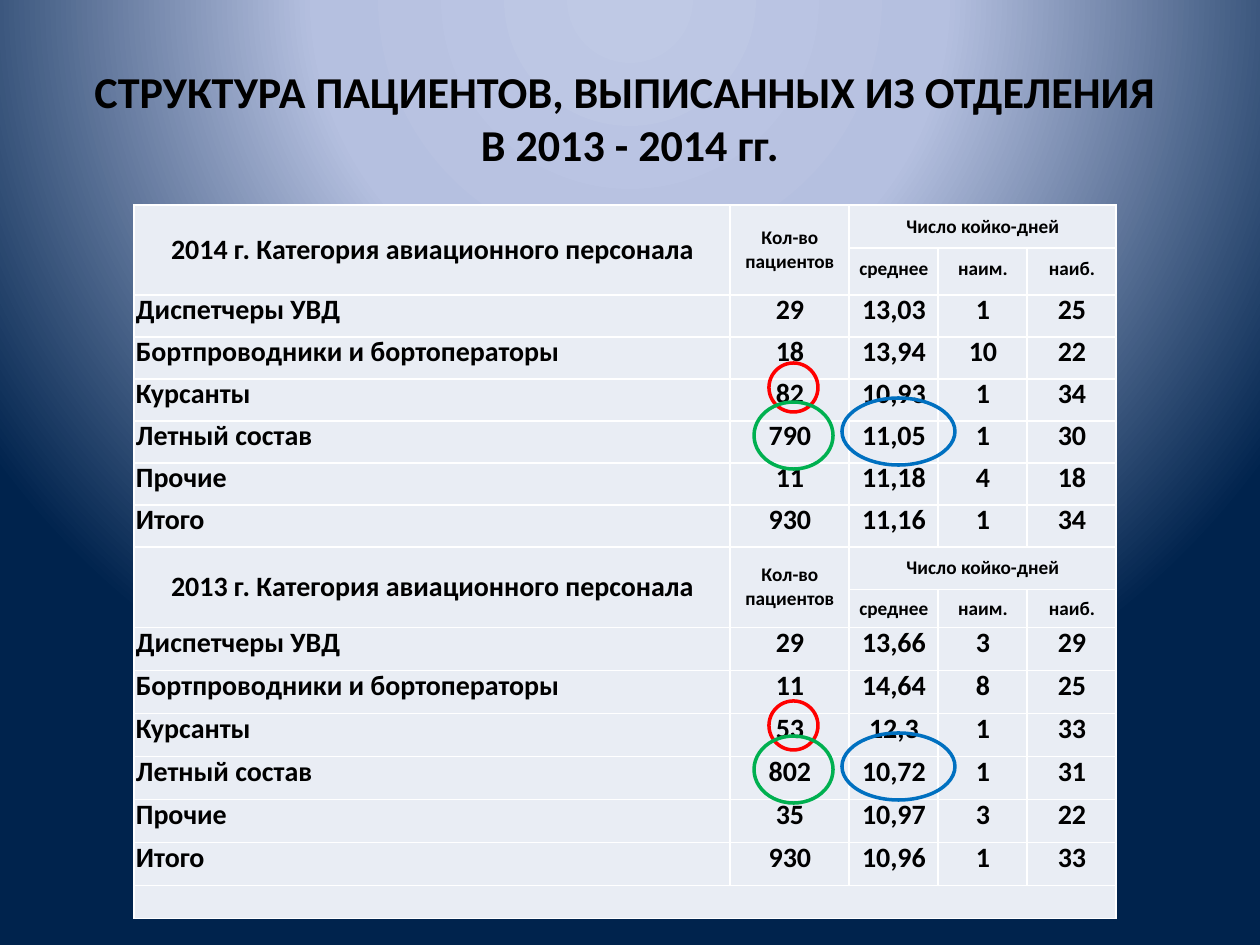
from dataclasses import dataclass

from lxml import etree
from pptx import Presentation
from pptx.dml.color import RGBColor
from pptx.enum.shapes import MSO_SHAPE
from pptx.enum.text import MSO_ANCHOR, PP_ALIGN
from pptx.oxml import parse_xml
from pptx.oxml.ns import nsdecls, qn
from pptx.util import Emu, Pt

EMU_PER_PX = 914400 / 126


@dataclass(frozen=True)
class Theme:
    font: str = "Calibri"
    ink: str = "000000"
    cell: str = "E9EDF4"
    border: str = "FFFFFF"
    red: str = "FF0000"
    green: str = "00B050"
    blue: str = "0070C0"
    glow: tuple = ((0, "BFC9E5"), (40, "B5C0E0"), (100, "00234D"))
    title_size: float = 25.2
    body_size: int = 16
    small_size: int = 11
    border_width: int = 1
    ring_width: int = 2


def px(length):
    return Emu(round(length * EMU_PER_PX))


class SlideBuilder:
    def __init__(self, page, theme):
        self.page = page
        self.theme = theme

    def background(self):
        stops = "".join(
            f'<a:gs pos="{place * 1000}"><a:srgbClr val="{color}"/></a:gs>'
            for place, color in self.theme.glow)
        self.page.element.cSld.insert(0, parse_xml(
            f'<p:bg {nsdecls("p", "a")}><p:bgPr><a:gradFill rotWithShape="1">'
            f'<a:gsLst>{stops}</a:gsLst><a:path path="circle">'
            '<a:fillToRect l="50000" t="-80000" r="50000" b="180000"/></a:path>'
            '</a:gradFill><a:effectLst/></p:bgPr></p:bg>'))

    def style(self, para, size, align):
        para.alignment = align
        for span in para.runs:
            span.font.name = self.theme.font
            span.font.size = Pt(size)
            span.font.bold = True
            span.font.color.rgb = RGBColor.from_string(self.theme.ink)

    def title(self, text, left, top, width, height):
        box = self.page.shapes.add_textbox(px(left), px(top), px(width), px(height))
        frame = box.text_frame
        frame.word_wrap = True
        frame.vertical_anchor = MSO_ANCHOR.MIDDLE
        frame.text = text
        self.style(frame.paragraphs[0], self.theme.title_size, PP_ALIGN.CENTER)

    def table(self, left, top, columns, rows):
        frame = self.page.shapes.add_table(
            len(rows), len(columns), px(left), px(top), px(sum(columns)), px(sum(rows)))
        grid = frame.table
        grid.first_row = grid.horz_banding = False
        for column, width in zip(grid.columns, columns):
            column.width = px(width)
        for row, height in zip(grid.rows, rows):
            row.height = px(height)
        for cell in grid.iter_cells():
            self.blank_cell(cell)
        return grid

    def blank_cell(self, cell):
        cell.margin_left = cell.margin_right = px(1)
        cell.margin_top = cell.margin_bottom = 0
        cell.vertical_anchor = MSO_ANCHOR.MIDDLE
        properties = cell._tc.get_or_add_tcPr()
        for side in ("lnL", "lnR", "lnT", "lnB"):
            properties.append(parse_xml(
                f'<a:{side} {nsdecls("a")} w="{Pt(self.theme.border_width)}"><a:solidFill>'
                f'<a:srgbClr val="{self.theme.border}"/></a:solidFill></a:{side}>'))
        cell.fill.solid()
        cell.fill.fore_color.rgb = RGBColor.from_string(self.theme.cell)
        # An empty cell must not stretch its row
        etree.SubElement(cell.text_frame.paragraphs[0]._p, qn("a:endParaRPr"),
                         sz=str(self.theme.small_size * 100))

    def cell_text(self, cell, text, size, align=PP_ALIGN.CENTER, before=0.8, spacing=None):
        para = cell.text_frame.paragraphs[0]
        para.text = text
        self.style(para, size, align)
        para._p.get_or_add_pPr().set("marL", str(px(1)))
        para.space_before = Pt(before)
        if spacing:
            para.line_spacing = Pt(spacing)

    def ring(self, color, left, top, width, height):
        ring = self.page.shapes.add_shape(
            MSO_SHAPE.OVAL, px(left), px(top), px(width), px(height))
        ring.shadow.inherit = False
        ring.fill.background()
        ring.line.color.rgb = RGBColor.from_string(color)
        ring.line.width = Pt(self.theme.ring_width)


CATEGORIES = ("Диспетчеры УВД", "Бортпроводники и бортоператоры", "Курсанты",
              "Летный состав", "Прочие", "Итого")
# Patients, then mean, shortest and longest stay
FIGURES = {
    2014: (("29", "13,03", "1", "25"), ("18", "13,94", "10", "22"),
           ("82", "10,93", "1", "34"), ("790", "11,05", "1", "30"),
           ("11", "11,18", "4", "18"), ("930", "11,16", "1", "34")),
    2013: (("29", "13,66", "3", "29"), ("11", "14,64", "8", "25"),
           ("53", "12,3", "1", "33"), ("802", "10,72", "1", "31"),
           ("35", "10,97", "3", "22"), ("930", "10,96", "1", "33")),
}
SUBHEAD_SPACING = {2014: {"before": 1.4, "spacing": 10.7}, 2013: {}}
COLUMNS = [596, 119] + [89] * 3
ROWS = [43, 47] + [42] * 6 + [43, 38] + [43] * 6 + [33]


def fill_year(builder, grid, first, year):
    theme = builder.theme
    # Two-row header
    for column, text, size in ((0, f"{year} г. Категория авиационного персонала", theme.body_size),
                               (1, "Кол-во пациентов", theme.small_size)):
        grid.cell(first, column).merge(grid.cell(first + 1, column))
        builder.cell_text(grid.cell(first, column), text, size)
    grid.cell(first, 2).merge(grid.cell(first, 4))
    builder.cell_text(grid.cell(first, 2), "Число койко-дней", theme.small_size)
    for column, text in enumerate(("среднее", "наим.", "наиб."), 2):
        builder.cell_text(grid.cell(first + 1, column), text, theme.small_size,
                          **SUBHEAD_SPACING[year])
    # Category rows
    for row, (category, values) in enumerate(zip(CATEGORIES, FIGURES[year]), first + 2):
        for column, text in enumerate((category, *values)):
            align = PP_ALIGN.CENTER if column else PP_ALIGN.LEFT
            builder.cell_text(grid.cell(row, column), text, theme.body_size,
                              align, before=1.4, spacing=12.8)


def main():
    deck = Presentation()
    deck.slide_width, deck.slide_height = px(1260), px(945)
    theme = Theme()
    builder = SlideBuilder(deck.slides.add_slide(deck.slide_layouts[6]), theme)

    # Background and title
    builder.background()
    builder.title("СТРУКТУРА ПАЦИЕНТОВ, ВЫПИСАННЫХ ИЗ ОТДЕЛЕНИЯ \vВ 2013 - 2014 гг.",
                  63, 38, 1134, 158)

    # Table: one block per year and an empty closing row
    grid = builder.table(134, 205, COLUMNS, ROWS)
    for block, year in enumerate(FIGURES):
        fill_year(builder, grid, block * (len(CATEGORIES) + 2), year)
    last = len(ROWS) - 1
    grid.cell(last, 0).merge(grid.cell(last, len(COLUMNS) - 1))

    # Rings around the key figures of each year
    for color, left, tops, width, height in (
            (theme.red, 769, (363, 701), 49, 49),
            (theme.green, 754, (402, 736), 79, 67),
            (theme.blue, 842, (398, 733), 113, 67)):
        for top in tops:
            builder.ring(color, left, top, width, height)

    deck.save("out.pptx")


if __name__ == "__main__":
    main()
